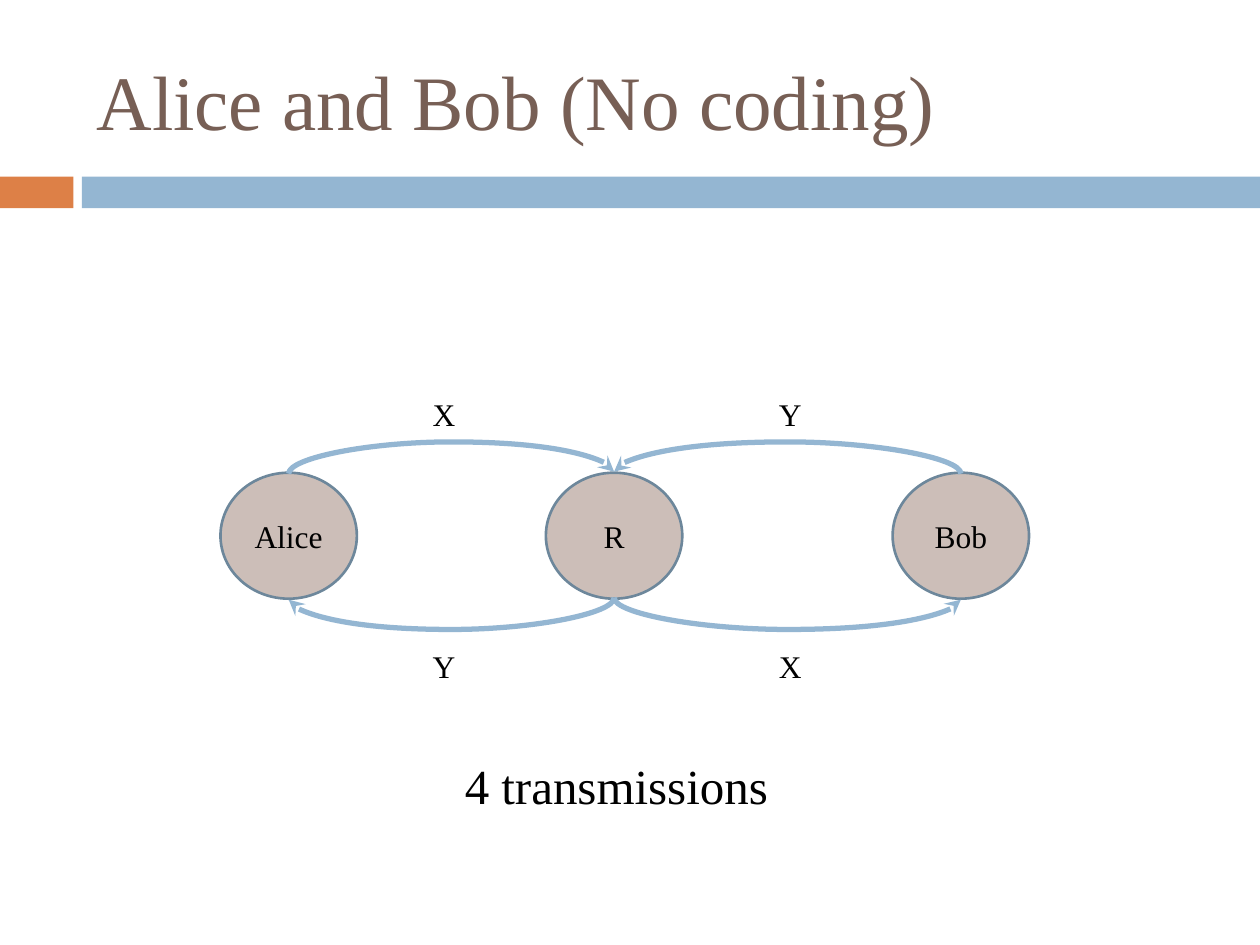
from lxml import etree
from pptx import Presentation
from pptx.dml.color import RGBColor
from pptx.enum.shapes import MSO_CONNECTOR, MSO_SHAPE
from pptx.enum.text import MSO_ANCHOR, MSO_AUTO_SIZE, PP_ALIGN
from pptx.oxml.ns import qn
from pptx.util import Cm, Pt

RECTANGLE, OVAL = MSO_SHAPE.RECTANGLE, MSO_SHAPE.OVAL
CURVE = MSO_CONNECTOR.CURVE
TOP, MIDDLE = MSO_ANCHOR.TOP, MSO_ANCHOR.MIDDLE
LEFT, CENTER = PP_ALIGN.LEFT, PP_ALIGN.CENTER
NO_AUTOFIT = MSO_AUTO_SIZE.NONE

BLACK = RGBColor(0x00, 0x00, 0x00)
BROWN = RGBColor(0x77, 0x5F, 0x55)
ORANGE = RGBColor(0xDD, 0x80, 0x47)
BLUE = RGBColor(0x94, 0xB6, 0xD2)
NODE_FILL = RGBColor(0xCC, 0xBE, 0xB8)
NODE_LINE = RGBColor(0x6D, 0x87, 0x9B)


def write(shape, text, size, color=BLACK, align=LEFT, anchor=TOP):
    frame = shape.text_frame
    frame_format = {"word_wrap": True, "auto_size": NO_AUTOFIT, "vertical_anchor": anchor}
    for key, value in frame_format.items():
        setattr(frame, key, value)
    paragraph = frame.paragraphs[0]
    paragraph.alignment = align
    run = paragraph.add_run()
    run.text = text
    for key, value in {"name": "Times New Roman", "size": Pt(size)}.items():
        setattr(run.font, key, value)
    run.font.color.rgb = color


def add_filled(kind, left, top, width, height, color):
    shape = slide.shapes.add_shape(kind, Cm(left), Cm(top), Cm(width), Cm(height))
    shape.shadow.inherit = False
    shape.fill.solid()
    shape.fill.fore_color.rgb = color
    shape.line.fill.background()
    return shape


prs = Presentation()
prs.slide_width, prs.slide_height = Cm(25.4), Cm(19.05)
slide = prs.slides.add_slide(prs.slide_layouts[5])

for left, width, color in [(0, 1.48, ORANGE), (1.65, 23.75, BLUE)]:
    add_filled(RECTANGLE, left, 3.56, width, 0.64, color)

title = slide.shapes.title
title_place = {"left": Cm(1.69), "top": Cm(0.64), "width": Cm(22.66), "height": Cm(2.75)}
for key, value in title_place.items():
    setattr(title, key, value)
write(title, "Alice and Bob (No coding)", 44, BROWN, anchor=MIDDLE)

node_width, node_height, node_top = 2.75, 2.54, 9.53
node_bottom = node_top + node_height
centers = {"Alice": 5.82, "R": 12.38, "Bob": 19.37}
for name, center in centers.items():
    node = add_filled(OVAL, center - node_width / 2, node_top, node_width, node_height, NODE_FILL)
    node.line.color.rgb = NODE_LINE
    node.line.width = Pt(1.5)
    write(node, name, 18, align=CENTER, anchor=MIDDLE)

depth, bulge = 0.04, 0.64
transmissions = [
    ("Alice", "R", "X", node_top, 90, -1, -1),
    ("Bob", "R", "Y", node_top, 270, 1, -1),
    ("R", "Bob", "X", node_bottom, 270, -1, 1),
    ("R", "Alice", "Y", node_bottom, 90, 1, 1),
]
for sender, receiver, message, y, angle, x_sign, y_sign in transmissions:
    middle = (centers[sender] + centers[receiver]) / 2
    half_span = abs(centers[sender] - centers[receiver]) / 2
    dx, dy = x_sign * depth / 2, y_sign * half_span
    arrow = slide.shapes.add_connector(
        CURVE, Cm(middle - dx), Cm(y - dy), Cm(middle + dx), Cm(y + dy))
    arrow.line.color.rgb = BLUE
    arrow.line.width = Pt(3)
    properties = arrow._element.spPr
    properties.find(qn("a:xfrm")).set("rot", str(angle * 60000))
    adjustments = properties.find(qn("a:prstGeom")).find(qn("a:avLst"))
    etree.SubElement(adjustments, qn("a:gd"), name="adj1",
                     fmla=f"val {round(bulge / depth * 100000)}")
    etree.SubElement(properties.find(qn("a:ln")), qn("a:tailEnd"), type="stealth")
    etree.SubElement(properties, qn("a:effectLst"))

    label_left = 8.47 if "Alice" in (sender, receiver) else 15.45
    label_top = 7.83 if y == node_top else 12.91
    label = slide.shapes.add_textbox(Cm(label_left), Cm(label_top), Cm(0.95), Cm(1.02))
    write(label, message, 18)

summary = slide.shapes.add_textbox(Cm(9.12), Cm(15.11), Cm(8.97), Cm(1.45))
write(summary, "4 transmissions", 28)

prs.save("out.pptx")
